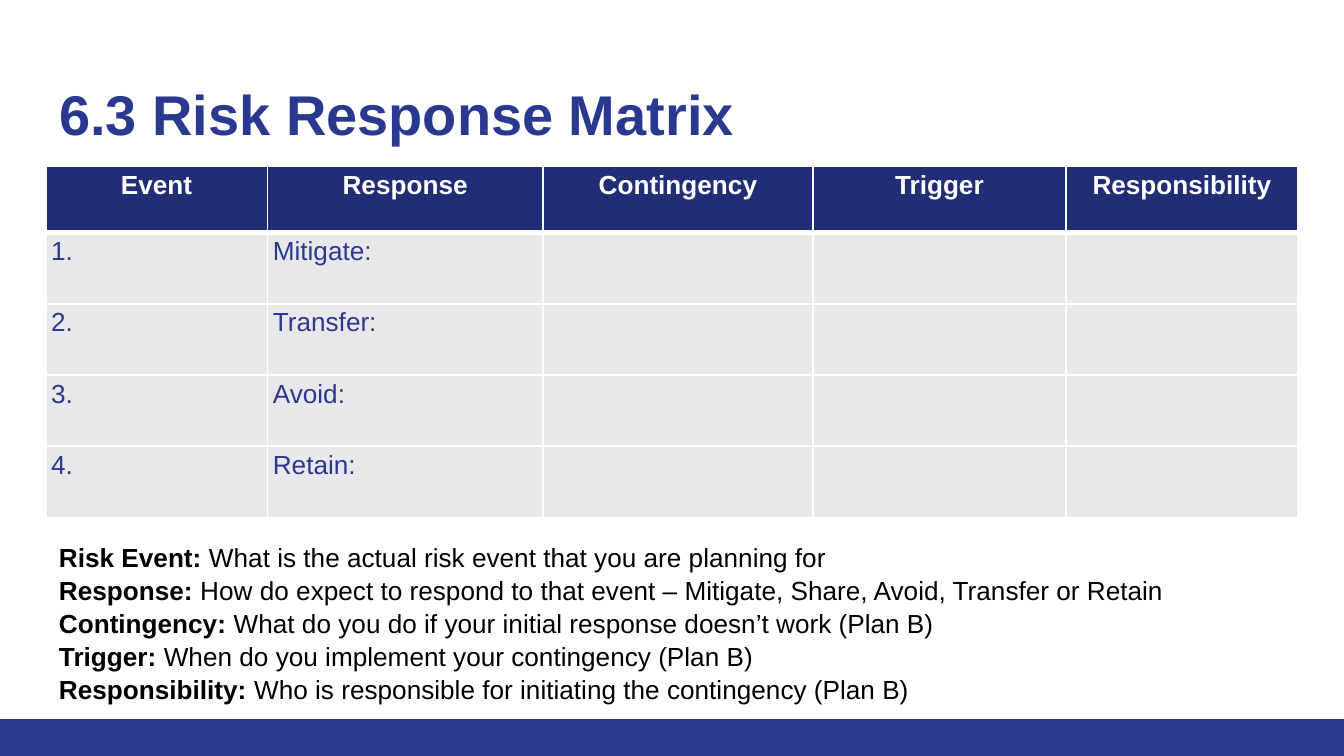
from dataclasses import dataclass

from lxml import etree
from pptx import Presentation
from pptx import util as u
from pptx.dml.color import RGBColor
from pptx.enum import shapes, text
from pptx.oxml import ns

PX = 4572


@dataclass(frozen=True)
class Theme:
    """Colours, type sizes and font of the slide."""
    font: str = "Arial"
    blue: str = "2A3990"
    navy: str = "212D74"
    grey: str = "E8E8EB"
    white: str = "FFFFFF"
    black: str = "000000"
    title_size: int = 30
    text_size: int = 14


THEME = Theme()
COLUMNS = [330, 410, 402, 376, 346]
ROWS = [98, 106, 106, 106, 106]
HEADERS = ["Event", "Response", "Contingency", "Trigger", "Responsibility"]
RESPONSES = ["Mitigate:", "Transfer:", "Avoid:", "Retain:"]
DEFINITIONS = {
    "Risk Event:": "What is the actual risk event that you are planning for",
    "Response:": "How do expect to respond to that event – Mitigate, Share, Avoid, Transfer or Retain",
    "Contingency:": "What do you do if your initial response doesn’t work (Plan B)",
    "Trigger:": "When do you implement your contingency (Plan B)",
    "Responsibility:": "Who is responsible for initiating the contingency (Plan B)",
}


def px(*lengths):
    """Turn pixel lengths into EMU."""
    return [u.Emu(length * PX) for length in lengths]


def apply_format(target, values):
    """Set each named attribute on the target."""
    for name, value in values.items():
        setattr(target, name, value)


def add_run(paragraph, words, colour, size=THEME.text_size, bold=False):
    """Add one styled run to a paragraph."""
    run = paragraph.add_run()
    run.text = words
    apply_format(run.font, {"name": THEME.font, "size": u.Pt(size), "bold": bold})
    run.font.color.rgb = RGBColor.from_string(colour)


def add_footer_bar(slide, box):
    """Draw the solid band along the bottom edge."""
    bar = slide.shapes.add_shape(shapes.MSO_SHAPE.RECTANGLE, *px(*box))
    bar.shadow.inherit = False
    bar.fill.solid()
    bar.fill.fore_color.rgb = RGBColor.from_string(THEME.blue)
    bar.line.fill.background()


def add_title(slide, box, words):
    """Place and style the title placeholder."""
    title = slide.shapes.title
    apply_format(title, dict(zip(("left", "top", "width", "height"), px(*box))))
    side, top = px(20, 28)
    apply_format(title.text_frame, {
        "margin_left": side, "margin_right": side, "margin_top": top, "margin_bottom": 0,
        "word_wrap": True, "auto_size": text.MSO_AUTO_SIZE.NONE,
        "vertical_anchor": text.MSO_ANCHOR.TOP,
    })
    paragraph = title.text_frame.paragraphs[0]
    paragraph.alignment = text.PP_ALIGN.LEFT
    add_run(paragraph, words, THEME.blue, THEME.title_size, True)


def set_borders(cell, widths):
    """Give a cell white borders with a width in points for each side."""
    properties = cell._tc.get_or_add_tcPr()
    for side, width in widths.items():
        line = etree.SubElement(properties, ns.qn(f"a:ln{side}"), w=str(u.Pt(width)))
        fill = etree.SubElement(line, ns.qn("a:solidFill"))
        etree.SubElement(fill, ns.qn("a:srgbClr"), val=THEME.white)


def fill_cell(cell, words, header, below_header):
    """Write one matrix cell in header or body style."""
    set_borders(cell, {"L": 1, "R": 1, "T": 3 if below_header else 1, "B": 3 if header else 1})
    cell.fill.solid()
    cell.fill.fore_color.rgb = RGBColor.from_string(THEME.navy if header else THEME.grey)
    if not words:
        return
    side = px(8)[0]
    apply_format(cell, {"margin_left": side, "margin_right": side,
                        "margin_top": 0, "margin_bottom": 0})
    paragraph = cell.text_frame.paragraphs[0]
    apply_format(paragraph, {
        "alignment": text.PP_ALIGN.CENTER if header else text.PP_ALIGN.LEFT,
        "line_spacing": 1.15, "space_after": u.Pt(10),
    })
    add_run(paragraph, words, THEME.white if header else THEME.blue, bold=header)


def add_matrix(slide, left, top):
    """Build the risk response table."""
    box = px(left, top, sum(COLUMNS), sum(ROWS))
    table = slide.shapes.add_table(len(ROWS), len(COLUMNS), *box).table
    for column, width in zip(table.columns, px(*COLUMNS)):
        column.width = width
    for row, height in zip(table.rows, px(*ROWS)):
        row.height = height
    body = [[f"{number}.", response, "", "", ""]
            for number, response in enumerate(RESPONSES, 1)]
    for row, entries in enumerate([HEADERS, *body]):
        for column, words in enumerate(entries):
            fill_cell(table.cell(row, column), words, row == 0, row == 1)


def add_definitions(slide, box):
    """List the meaning of each matrix column."""
    frame = slide.shapes.add_textbox(*px(*box)).text_frame
    apply_format(frame, {"word_wrap": True, "auto_size": text.MSO_AUTO_SIZE.SHAPE_TO_FIT_TEXT})
    for index, (term, meaning) in enumerate(DEFINITIONS.items()):
        paragraph = frame.add_paragraph() if index else frame.paragraphs[0]
        paragraph.line_spacing = 1.05
        add_run(paragraph, f"{term} ", THEME.black, bold=True)
        add_run(paragraph, meaning, THEME.black)


def main():
    """Build and save the presentation."""
    presentation = Presentation()
    presentation.slide_width, presentation.slide_height = px(2000, 1125)
    slide = presentation.slides.add_slide(presentation.slide_layouts[5])
    add_footer_bar(slide, (0, 1070, 2000, 55))
    add_title(slide, (68, 90, 1864, 132), "6.3 Risk Response Matrix")
    add_matrix(slide, 68, 248)
    add_definitions(slide, (68, 794, 1864, 256))
    presentation.save("out.pptx")


if __name__ == "__main__":
    main()
